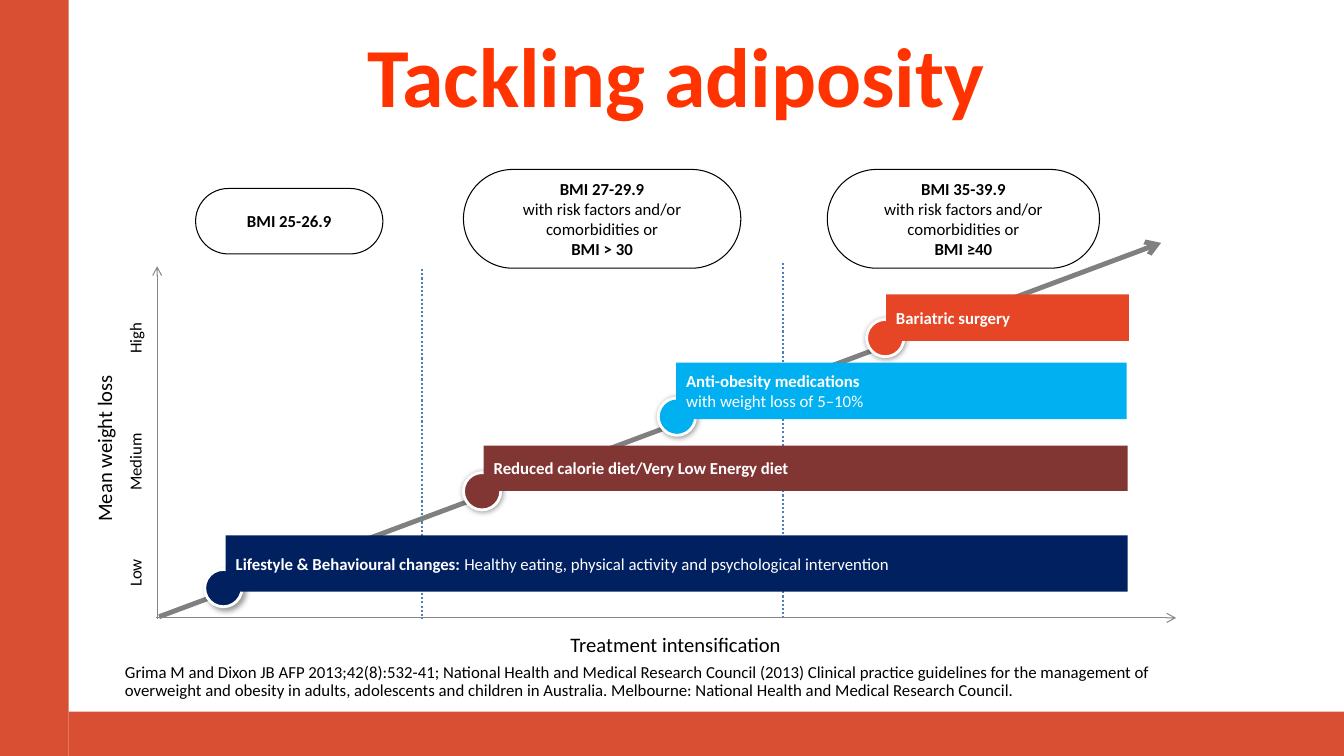
from dataclasses import dataclass
from typing import Optional

import lxml.etree
import pptx
import pptx.dml.color
import pptx.enum.dml
import pptx.enum.shapes
import pptx.enum.text
import pptx.oxml.ns
import pptx.util

Cm, Pt = pptx.util.Cm, pptx.util.Pt
RGB = pptx.dml.color.RGBColor
qn = pptx.oxml.ns.qn
Shape = pptx.enum.shapes.MSO_SHAPE
Dash = pptx.enum.dml.MSO_LINE
Align = pptx.enum.text.PP_ALIGN
Anchor = pptx.enum.text.MSO_ANCHOR


@dataclass(frozen=True)
class Theme:
    font: str = "Calibri"
    title_size: float = 60
    axis_size: float = 14.7
    body_size: float = 12
    band: str = "D84F34"
    title: str = "FF3300"
    text: str = "000000"
    white: str = "FFFFFF"
    divider: str = "4B7EBC"
    trend: str = "808080"
    axis: str = "868686"
    lifestyle: str = "002060"
    diet: str = "823634"
    medication: str = "00B0F0"
    surgery: str = "E64626"


THEME = Theme()


@dataclass(frozen=True)
class Box:
    left: float
    top: float
    width: float
    height: float

    def lengths(self) -> tuple:
        return Cm(self.left), Cm(self.top), Cm(self.width), Cm(self.height)


@dataclass(frozen=True)
class Para:
    text: str
    bold: tuple = (False,)
    tail: str = ""


@dataclass(frozen=True)
class Label:
    box: Box
    text: str
    size: float = THEME.body_size
    color: str = THEME.text
    bold: bool = False
    align: Align = Align.CENTER
    anchor: Anchor = Anchor.TOP
    vertical: bool = False
    spacing: float = 1.0


@dataclass(frozen=True)
class Line:
    x1: float
    y1: float
    x2: float
    y2: float
    color: str
    width: float
    arrow: bool = True
    dash: Optional[Dash] = None


@dataclass(frozen=True)
class Pill:
    box: Box
    paras: tuple


@dataclass(frozen=True)
class Step:
    color: str
    dot_left: float
    dot_top: float
    bar: Box
    para: Para
    shadow_distance: int = 1


DOT = 0.94
TOP_BOLD = (True,)
BANDS = (Box(0, 0, 1.73, 19.05), Box(1.73, 17.93, 32.14, 1.12))
LABELS = (
    Label(Box(1.8, 0.28, 30.48, 3.18), "Tackling adiposity", THEME.title_size,
          THEME.title, bold=True, anchor=Anchor.MIDDLE),
    Label(Box(11.02, 15.93, 12.01, 0.64), "Treatment intensification", THEME.axis_size),
    Label(Box(2.31, 7.77, 0.81, 7.06), "Mean weight loss", THEME.axis_size, vertical=True),
    Label(Box(3.15, 13.21, 0.81, 2.36), "Low ", vertical=True),
    Label(Box(3.15, 10.46, 0.81, 2.36), "Medium", vertical=True),
    Label(Box(3.15, 7.34, 0.81, 2.36), "High", vertical=True),
    Label(Box(3.15, 16.74, 27.79, 0.91),
          "Grima M and Dixon JB AFP 2013;42(8):532-41; National Health and Medical "
          "Research Council (2013) Clinical practice guidelines for the management of "
          "overweight and obesity in adults, adolescents and children in Australia. "
          "Melbourne: National Health and Medical Research Council.",
          align=Align.LEFT, anchor=Anchor.MIDDLE, spacing=0.9),
)
LINES = (
    Line(10.64, 6.78, 10.64, 15.6, THEME.divider, 1.5, False, Dash.ROUND_DOT),
    Line(19.74, 6.63, 19.74, 15.57, THEME.divider, 1.5, False, Dash.ROUND_DOT),
    Line(4.01, 15.54, 29.26, 6.12, THEME.trend, 3.5),
    Line(3.94, 15.57, 29.64, 15.57, THEME.axis, 0.75),
    Line(3.96, 15.6, 3.96, 6.71, THEME.axis, 0.75),
)
RISK = Para("with risk factors and/or comorbidities or")
PILLS = (
    Pill(Box(4.93, 4.75, 4.72, 1.65), (Para("BMI 25-26.9", TOP_BOLD),)),
    Pill(Box(11.68, 4.27, 6.99, 2.49),
         (Para("BMI 27-29.9", TOP_BOLD), RISK, Para("BMI > 30", TOP_BOLD))),
    Pill(Box(20.85, 4.27, 6.86, 2.49),
         (Para("BMI 35-39.9", TOP_BOLD), RISK, Para("BMI ≥40", TOP_BOLD))),
)
STEPS = (
    Step(THEME.lifestyle, 5.16, 14.35, Box(5.69, 13.49, 22.73, 1.42),
         Para("Lifestyle & Behavioural changes: ", (True, False),
              "Healthy eating, physical activity and psychological intervention"), 3),
    Step(THEME.diet, 11.68, 11.91, Box(12.19, 11.23, 16.23, 1.14),
         Para("Reduced calorie diet/Very Low Energy diet", TOP_BOLD)),
    Step(THEME.medication, 16.59, 10.03, Box(17.04, 9.14, 11.35, 1.42),
         Para("Anti-obesity medications\nwith weight loss of 5–10%", (True, False))),
    Step(THEME.surgery, 21.84, 8.05, Box(22.33, 7.42, 6.12, 1.17),
         Para("Bariatric surgery", TOP_BOLD)),
)


def write(tf, paras: tuple, size: float, color: str, align: Align, spacing: float = 1.0) -> None:
    tf.word_wrap = True
    for i, para in enumerate(paras):
        p = tf.add_paragraph() if i else tf.paragraphs[0]
        p.text = para.text
        if para.tail:
            p.add_run().text = para.tail
        p.alignment = align
        p.line_spacing = spacing
        for r, bold in zip(p.runs, para.bold):
            r.font.name = THEME.font
            r.font.size = Pt(size)
            r.font.bold = bold
            r.font.color.rgb = RGB.from_string(color)


def add_block(s, kind: Shape, box: Box, fill: str, line: Optional[str] = None, width: float = 0.75):
    sp = s.shapes.add_shape(kind, *box.lengths())
    sp.shadow.inherit = False
    sp.fill.solid()
    sp.fill.fore_color.rgb = RGB.from_string(fill)
    if line:
        sp.line.color.rgb = RGB.from_string(line)
        sp.line.width = Pt(width)
    else:
        sp.line.fill.background()
    return sp


def add_label(s, label: Label) -> None:
    tf = s.shapes.add_textbox(*label.box.lengths()).text_frame
    tf.margin_left = tf.margin_right = tf.margin_top = tf.margin_bottom = 0
    tf.vertical_anchor = label.anchor
    if label.vertical:
        tf._txBody.bodyPr.set("vert", "vert270")
    write(tf, (Para(label.text, (label.bold,)),), label.size, label.color,
          label.align, label.spacing)


def add_line(s, line: Line) -> None:
    sp = s.shapes.add_connector(pptx.enum.shapes.MSO_CONNECTOR.STRAIGHT, Cm(line.x1),
                                Cm(line.y1), Cm(line.x2), Cm(line.y2))
    sp.line.color.rgb = RGB.from_string(line.color)
    sp.line.width = Pt(line.width)
    if line.dash:
        sp.line.dash_style = line.dash
    if line.arrow:
        lxml.etree.SubElement(sp.line._get_or_add_ln(), qn("a:tailEnd"), type="arrow")
    lxml.etree.SubElement(sp._element.spPr, qn("a:effectLst"))


def add_dot(s, step: Step) -> None:
    sp = add_block(s, Shape.OVAL, Box(step.dot_left, step.dot_top, DOT, DOT),
                   step.color, THEME.white, 2)
    effects = sp._element.spPr.find(qn("a:effectLst"))
    shadow = lxml.etree.SubElement(effects, qn("a:outerShdw"), blurRad=str(Pt(4)),
                                   dist=str(Pt(step.shadow_distance)), dir="2700000")
    color = lxml.etree.SubElement(shadow, qn("a:srgbClr"), val=THEME.text)
    lxml.etree.SubElement(color, qn("a:alpha"), val="40000")


def add_bar(s, step: Step) -> None:
    sp = add_block(s, Shape.ROUNDED_RECTANGLE, step.bar, step.color)
    sp.adjustments[0] = 0
    write(sp.text_frame, (step.para,), THEME.body_size, THEME.white, Align.LEFT)


def add_pill(s, pill: Pill) -> None:
    sp = add_block(s, Shape.ROUNDED_RECTANGLE, pill.box, THEME.white, THEME.text)
    sp.adjustments[0] = 0.5
    write(sp.text_frame, pill.paras, THEME.body_size, THEME.text, Align.CENTER)


def main() -> None:
    prs = pptx.Presentation()
    prs.slide_width, prs.slide_height = Cm(33.87), Cm(19.05)
    s = prs.slides.add_slide(prs.slide_layouts[6])
    for band in BANDS:
        add_block(s, Shape.RECTANGLE, band, THEME.band)
    for draw, items in ((add_line, LINES), (add_label, LABELS), (add_dot, STEPS),
                        (add_bar, STEPS), (add_pill, PILLS)):
        for item in items:
            draw(s, item)
    prs.save("out.pptx")


if __name__ == "__main__":
    main()
